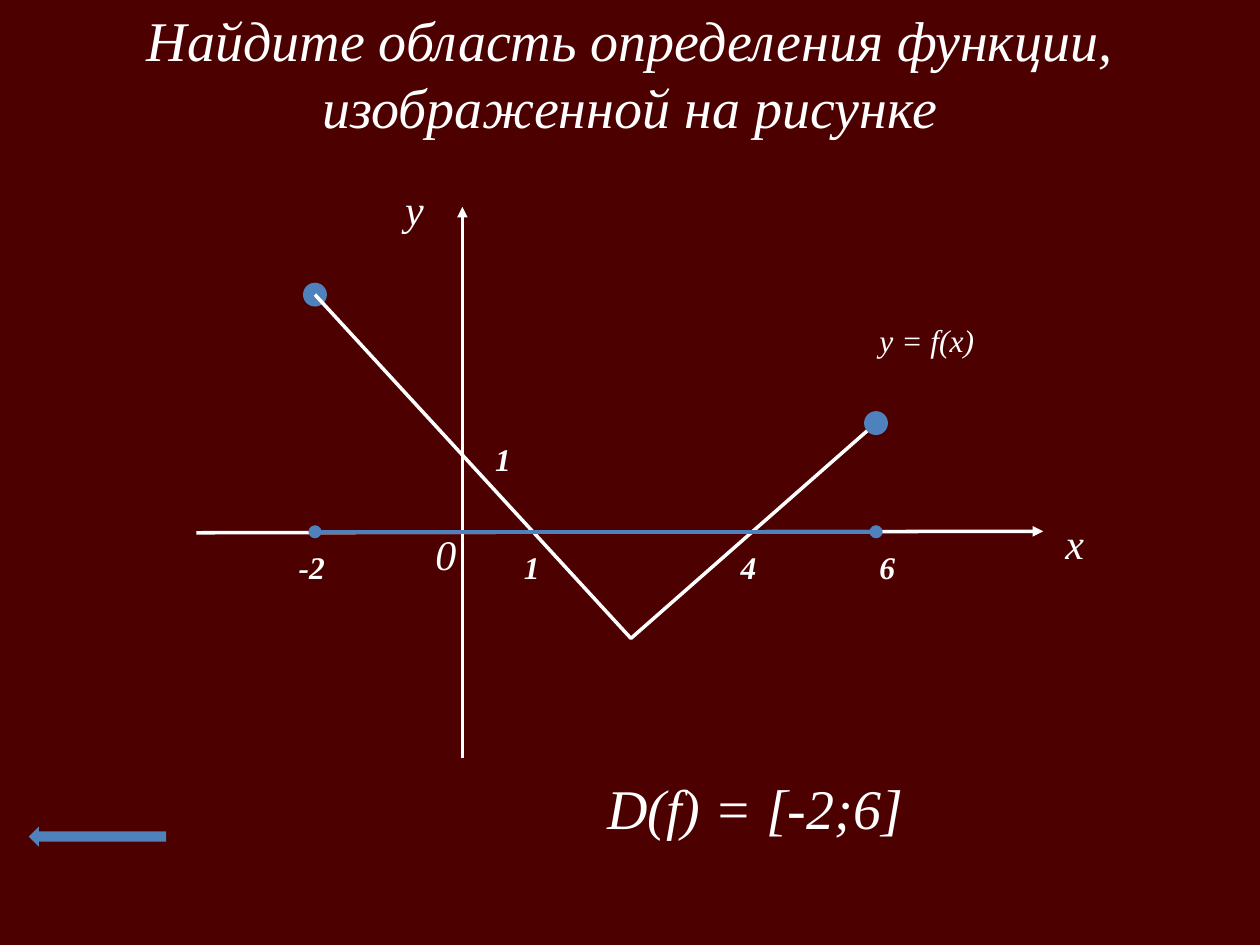
from dataclasses import dataclass

from lxml.etree import SubElement
from pptx import Presentation
from pptx.dml.color import RGBColor
from pptx.enum.shapes import MSO_CONNECTOR, MSO_SHAPE
from pptx.enum.text import MSO_ANCHOR, PP_ALIGN
from pptx.oxml.ns import qn
from pptx.util import Cm, Pt


@dataclass(frozen=True)
class Theme:
    background: RGBColor = RGBColor(0x4C, 0x00, 0x00)
    ink: RGBColor = RGBColor(0xFF, 0xFF, 0xFF)
    accent: RGBColor = RGBColor(0x4F, 0x81, 0xBD)
    font: str = "Times New Roman"
    title: int = 32
    axis: int = 24
    tick: int = 18
    stroke: float = 2
    domain_stroke: float = 2.5


class GraphPage:
    """Draws the elements of a function graph on one slide in a shared style."""

    def __init__(self, page, theme):
        self.page = page
        self.theme = theme
        fill = page.background.fill
        fill.solid()
        fill.fore_color.rgb = theme.background

    def text(self, words, left, top, width, height, size, bold=False, wrap=True,
             align=PP_ALIGN.LEFT, anchor=MSO_ANCHOR.TOP):
        box = self.page.shapes.add_textbox(Cm(left), Cm(top), Cm(width), Cm(height))
        frame = box.text_frame
        frame.word_wrap = wrap
        frame.vertical_anchor = anchor
        para = frame.paragraphs[0]
        para.alignment = align
        span = para.add_run()
        span.text = words
        formats = {"name": self.theme.font, "size": Pt(size), "bold": bold, "italic": True}
        for name, value in formats.items():
            setattr(span.font, name, value)
        span.font.color.rgb = self.theme.ink

    def stroke(self, line, color, width):
        line.color.rgb = color
        line.width = Pt(width)

    def line(self, start, end, color, width, **ends):
        connector = self.page.shapes.add_connector(
            MSO_CONNECTOR.STRAIGHT, *map(Cm, start + end))
        self.stroke(connector.line, color, width)
        for name, kind in ends.items():
            SubElement(connector.line._get_or_add_ln(), qn(f"a:{name}"), type=kind)
        SubElement(connector._element.spPr, qn("a:effectLst"))

    def axis(self, tip, tail):
        self.line(tip, tail, self.theme.ink, self.theme.stroke, headEnd="triangle")

    def domain(self, start, end):
        self.line(start, end, self.theme.accent, self.theme.domain_stroke,
                  headEnd="oval", tailEnd="oval")

    def curve(self, points):
        corners = [tuple(map(Cm, point)) for point in points]
        builder = self.page.shapes.build_freeform(*corners[0])
        builder.add_line_segments(corners[1:], close=False)
        shape = builder.convert_to_shape()
        shape.shadow.inherit = False
        shape.fill.background()
        self.stroke(shape.line, self.theme.ink, self.theme.stroke)

    def solid(self, kind, left, top, width, height):
        shape = self.page.shapes.add_shape(kind, Cm(left), Cm(top), Cm(width), Cm(height))
        shape.shadow.inherit = False
        shape.fill.solid()
        shape.fill.fore_color.rgb = self.theme.accent
        shape.line.fill.background()
        return shape

    def dot(self, center, diameter=0.41):
        left, top = (value - diameter / 2 for value in center)
        shape = self.solid(MSO_SHAPE.OVAL, left, top, diameter, diameter)
        self.stroke(shape.line, self.theme.accent, self.theme.stroke)


def main():
    deck = Presentation()
    deck.slide_width, deck.slide_height = Cm(25.4), Cm(19.05)
    theme = Theme()
    graph = GraphPage(deck.slides.add_slide(deck.slide_layouts[6]), theme)

    graph.text("Найдите область определения функции, изображенной на рисунке",
               0, -0.03, 25.4, 3, theme.title,
               align=PP_ALIGN.CENTER, anchor=MSO_ANCHOR.MIDDLE)
    graph.axis((9.32, 4.17), (9.32, 15.29))
    graph.axis((21.03, 10.71), (3.96, 10.74))

    for name, left, top in (("x", 21.23, 10.31), ("0", 8.53, 10.52), ("y", 7.92, 3.58)):
        graph.text(name, left, top, 1.4, 1.27, theme.axis)
    for value, left, top in (("-2", 5.77, 10.92), ("1", 10.31, 10.92), ("4", 14.68, 10.92),
                             ("6", 17.48, 10.92), ("1", 9.73, 8.74)):
        graph.text(value, left, top, 1.6, 1.02, theme.tick, bold=True)
    graph.text("y = f(x)", 17.48, 6.35, 2.44, 1.02, theme.tick, wrap=False)

    first, lowest, last = (6.35, 5.94), (12.72, 12.87), (17.66, 8.53)
    graph.dot(first)
    graph.curve((first, lowest, last))
    graph.dot(last)
    graph.domain((first[0], 10.72), (last[0], 10.72))

    graph.text("D(f) = [-2;6]", 11.99, 15.47, 8.18, 1.63, theme.title)
    graph.solid(MSO_SHAPE.LEFT_ARROW, 0.58, 16.66, 2.77, 0.41)
    deck.save("out.pptx")


if __name__ == "__main__":
    main()
